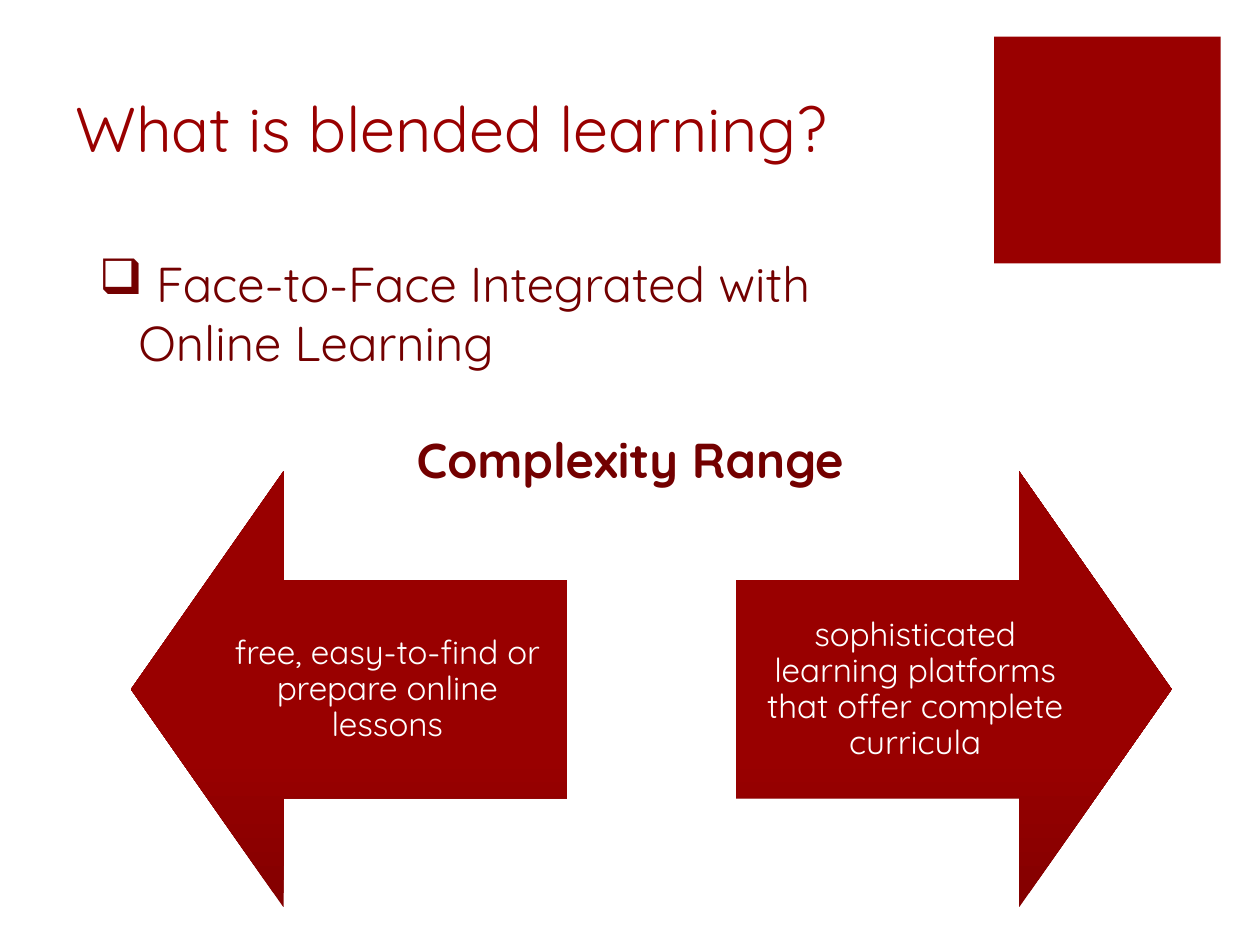
from pptx import Presentation
from pptx.dml.color import RGBColor
from pptx.enum.shapes import MSO_SHAPE
from pptx.enum.text import MSO_ANCHOR, PP_ALIGN
from pptx.oxml.ns import qn
from pptx.util import Cm, Pt
from lxml import etree

RED = RGBColor(0x99, 0x00, 0x00)
DEEP_RED = RGBColor(0x83, 0x00, 0x00)
DARK_RED = RGBColor(0x73, 0x00, 0x00)
WHITE = RGBColor(0xFF, 0xFF, 0xFF)
RECTANGLE = MSO_SHAPE.RECTANGLE
UP_ARROW = MSO_SHAPE.UP_ARROW
MIDDLE = MSO_ANCHOR.MIDDLE
CENTER = PP_ALIGN.CENTER
FONT = "Quicksand"


def write(paragraph, text, size, color, bold=False):
    run = paragraph.add_run()
    run.text = text
    run.font.name = FONT
    run.font.size = Pt(size)
    run.font.color.rgb = color
    run.font.bold = bold


presentation = Presentation()
presentation.slide_width = Cm(25.4)
presentation.slide_height = Cm(19.05)
slide = presentation.slides.add_slide(presentation.slide_layouts[6])
shapes = slide.shapes

square = shapes.add_shape(RECTANGLE, Cm(20.04), Cm(0.74), Cm(4.57), Cm(4.57))
square.shadow.inherit = False
square.fill.solid()
square.fill.fore_color.rgb = RED
square.line.fill.background()

title = shapes.add_textbox(Cm(1.27), Cm(1.68), Cm(18.08), Cm(3.3))
title.text_frame.word_wrap = True
write(title.text_frame.paragraphs[0], "What is blended learning?", 36, RED)

ARROW_SIZE = Cm(8.79)
ARROW_TOP = Cm(9.5)
LABEL_WIDTH = Cm(7.24)
arrows = [
    (Cm(2.64), 270, Cm(4.19), "free, easy-to-find or prepare online lessons"),
    (Cm(14.83), 90, Cm(14.83),
     "sophisticated learning platforms that offer complete curricula"),
]
for arrow_left, rotation, label_left, text in arrows:
    arrow = shapes.add_shape(UP_ARROW, arrow_left, ARROW_TOP, ARROW_SIZE, ARROW_SIZE)
    arrow.rotation = rotation
    arrow.adjustments[0] = 0.5
    arrow.adjustments[1] = 0.35
    arrow.shadow.inherit = False
    arrow.line.fill.background()
    arrow.fill.gradient()
    arrow.fill.gradient_angle = 90
    for stop, color, position in zip(arrow.fill.gradient_stops, (DEEP_RED, RED), (0, 0.35)):
        stop.color.rgb = color
        stop.position = position
    arrow._element.spPr.find(qn("a:gradFill")).set("rotWithShape", "0")

    label = shapes.add_textbox(label_left, Cm(11.71), LABEL_WIDTH, Cm(4.39))
    frame = label.text_frame
    frame.word_wrap = True
    frame.vertical_anchor = MIDDLE
    frame.margin_left = frame.margin_right = Cm(0.38)
    frame.margin_top = frame.margin_bottom = Cm(0.38)
    paragraph = frame.paragraphs[0]
    paragraph.alignment = CENTER
    paragraph.line_spacing = 0.9
    write(paragraph, text, 19, WHITE)

body = shapes.add_textbox(Cm(1.75), Cm(4.98), Cm(17.6), Cm(5.82))
body.text_frame.word_wrap = True
bullet = body.text_frame.paragraphs[0]
write(bullet, " Face-to-Face Integrated with Online Learning", 28, DARK_RED)
properties = bullet._p.get_or_add_pPr()
properties.set("marL", str(Cm(0.79)))
properties.set("indent", str(-Cm(0.79)))
etree.SubElement(properties, qn("a:buChar")).set("char", "❑")

heading = body.text_frame.add_paragraph()
heading.space_before = Pt(33.6)
heading._p.get_or_add_pPr().set("marL", str(Cm(6.4)))
write(heading, "Complexity Range", 28, DARK_RED, bold=True)

presentation.save("out.pptx")
